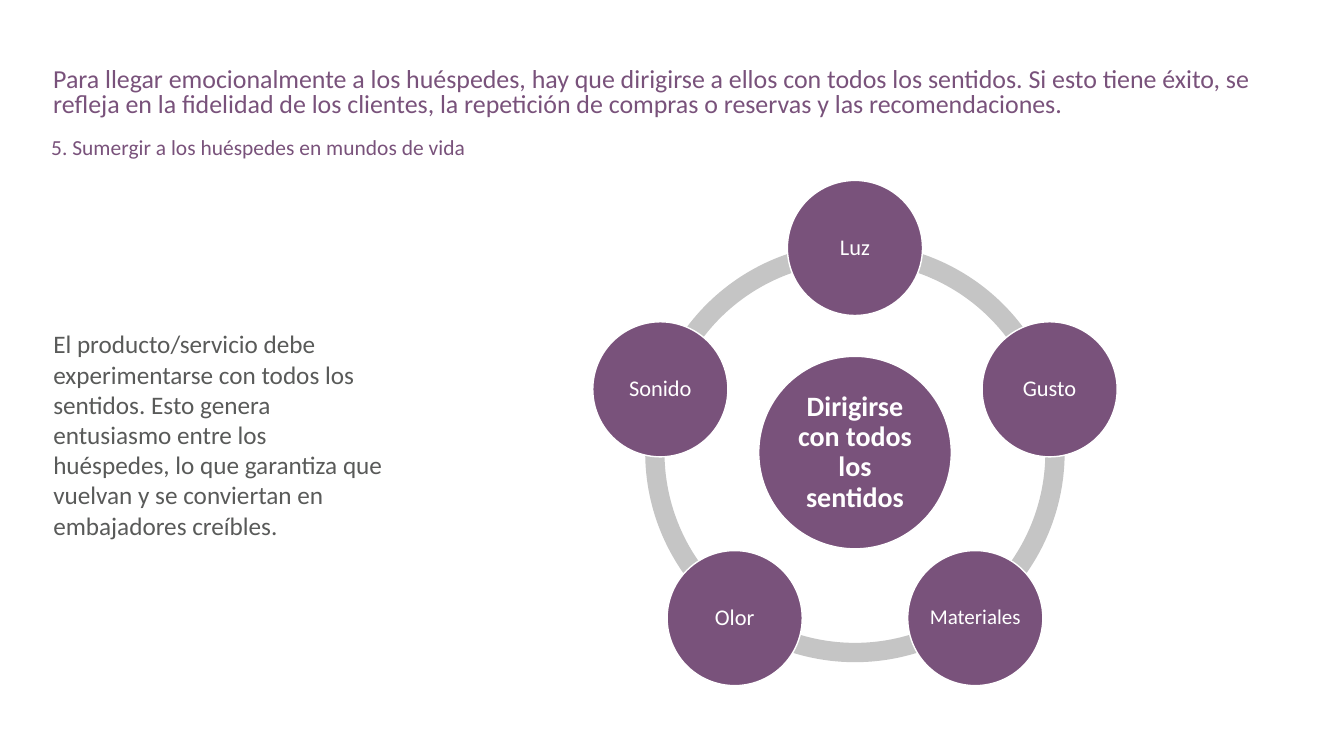
from math import cos, radians, sin
from typing import NamedTuple

from pptx import Presentation
from pptx.dml.color import RGBColor
from pptx.enum import shapes, text
from pptx.util import Inches, Pt

PURPLE = RGBColor(0x79, 0x52, 0x7B)
GRAY = RGBColor(0x59, 0x5A, 0x59)
RING_GRAY = RGBColor(0xC5, 0xC5, 0xC5)
WHITE = RGBColor(0xFF, 0xFF, 0xFF)

CENTER_X, CENTER_Y = 8.48, 4.49
RING_SIZE = 4.16
ORBIT_RADIUS = 2.03
SENSE_SIZE, HUB_SIZE = 1.34, 1.91


class TextBlock(NamedTuple):
    words: str
    left: float
    top: float
    width: float
    height: float
    size: float
    color: RGBColor
    spacing: float
    anchor: text.MSO_ANCHOR


class Sense(NamedTuple):
    name: str
    size: float


TEXT_BLOCKS = [
    TextBlock("El producto/servicio debe experimentarse con todos los sentidos. "
              "Esto genera entusiasmo entre los huéspedes, lo que garantiza que "
              "vuelvan y se conviertan en embajadores creíbles.",
              0.43, 1.79, 3.49, 5.04, 18, GRAY, 1.0, text.MSO_ANCHOR.MIDDLE),
    TextBlock("Para llegar emocionalmente a los huéspedes, hay que dirigirse a ellos "
              "con todos los sentidos. Si esto tiene éxito, se refleja en la fidelidad "
              "de los clientes, la repetición de compras o reservas y las recomendaciones.",
              0.43, 0.63, 12.54, 0.64, 18.5, PURPLE, 0.8, text.MSO_ANCHOR.TOP),
    TextBlock("5. Sumergir a los huéspedes en mundos de vida",
              0.41, 1.35, 12.56, 0.28, 15.3, PURPLE, 0.7, text.MSO_ANCHOR.TOP),
]

# Clockwise from the top
SENSES = [Sense("Luz", 16), Sense("Gusto", 16), Sense("Materiales", 15),
          Sense("Olor", 16), Sense("Sonido", 16)]
STEP = 360 / len(SENSES)


def set_attributes(target, values: dict) -> None:
    for name, value in values.items():
        setattr(target, name, value)


def write(shape, words: str, font: dict, paragraph_format: dict, frame_format: dict) -> None:
    frame = shape.text_frame
    set_attributes(frame, {"word_wrap": True, **frame_format})
    paragraph = frame.paragraphs[0]
    set_attributes(paragraph, paragraph_format)
    run = paragraph.add_run()
    run.text = words
    set_attributes(run.font, {"name": "Calibri", "size": Pt(font["size"]),
                              "bold": font.get("bold", False)})
    run.font.color.rgb = font["color"]


def add_centered(slide, kind, center_x: float, center_y: float, size: float, color: RGBColor):
    shape = slide.shapes.add_shape(kind, Inches(center_x - size / 2),
                                   Inches(center_y - size / 2), Inches(size), Inches(size))
    shape.shadow.inherit = False
    shape.fill.solid()
    shape.fill.fore_color.rgb = color
    return shape


def add_arc(slide, start: float) -> None:
    arc = add_centered(slide, shapes.MSO_SHAPE.BLOCK_ARC, CENTER_X, CENTER_Y,
                       RING_SIZE, RING_GRAY)
    arc.line.fill.background()
    # Angles are stored in 60000ths of a degree, adjustments in 100000ths
    arc.adjustments[0] = start % 360 * 0.6
    arc.adjustments[1] = (start + STEP) % 360 * 0.6
    arc.adjustments[2] = 0.046


def add_circle(slide, words: str, center_x: float, center_y: float, size: float,
               font_size: float, bold: bool, inset: float) -> None:
    circle = add_centered(slide, shapes.MSO_SHAPE.OVAL, center_x, center_y, size, PURPLE)
    circle.line.color.rgb = WHITE
    circle.line.width = Pt(1)
    margins = {f"margin_{side}": Inches(inset) for side in ("left", "top", "right", "bottom")}
    write(circle, words, {"size": font_size, "color": WHITE, "bold": bold},
          {"alignment": text.PP_ALIGN.CENTER, "line_spacing": 0.9},
          {"vertical_anchor": text.MSO_ANCHOR.MIDDLE, **margins})


def add_text_block(slide, block: TextBlock) -> None:
    box = slide.shapes.add_textbox(Inches(block.left), Inches(block.top),
                                   Inches(block.width), Inches(block.height))
    write(box, block.words, {"size": block.size, "color": block.color},
          {"line_spacing": block.spacing}, {"vertical_anchor": block.anchor})


def main() -> None:
    presentation = Presentation()
    presentation.slide_width = Inches(13.33)
    presentation.slide_height = Inches(7.5)
    slide = presentation.slides.add_slide(presentation.slide_layouts[6])

    # Ring and hub
    angles = [-90 + index * STEP for index in range(len(SENSES))]
    for angle in angles:
        add_arc(slide, angle)
    add_circle(slide, "Dirigirse con todos los sentidos", CENTER_X, CENTER_Y,
               HUB_SIZE, 20, True, 0.03)

    # Senses around the ring
    for sense, angle in zip(SENSES, angles):
        add_circle(slide, sense.name,
                   CENTER_X + ORBIT_RADIUS * cos(radians(angle)),
                   CENTER_Y + ORBIT_RADIUS * sin(radians(angle)),
                   SENSE_SIZE, sense.size, False, 0.02)

    # Heading, subheading and explanation
    for block in TEXT_BLOCKS:
        add_text_block(slide, block)

    presentation.save("out.pptx")


if __name__ == "__main__":
    main()
